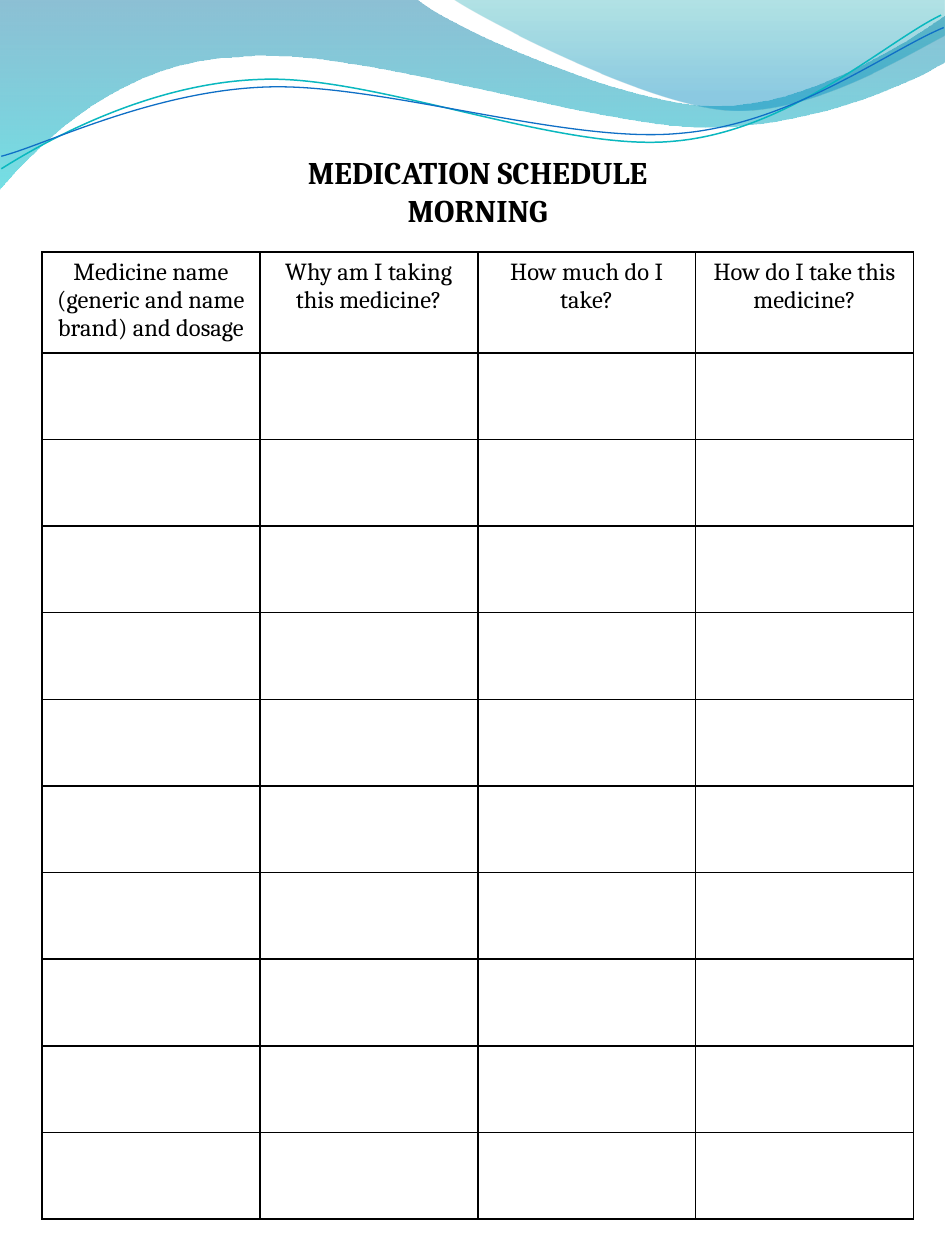
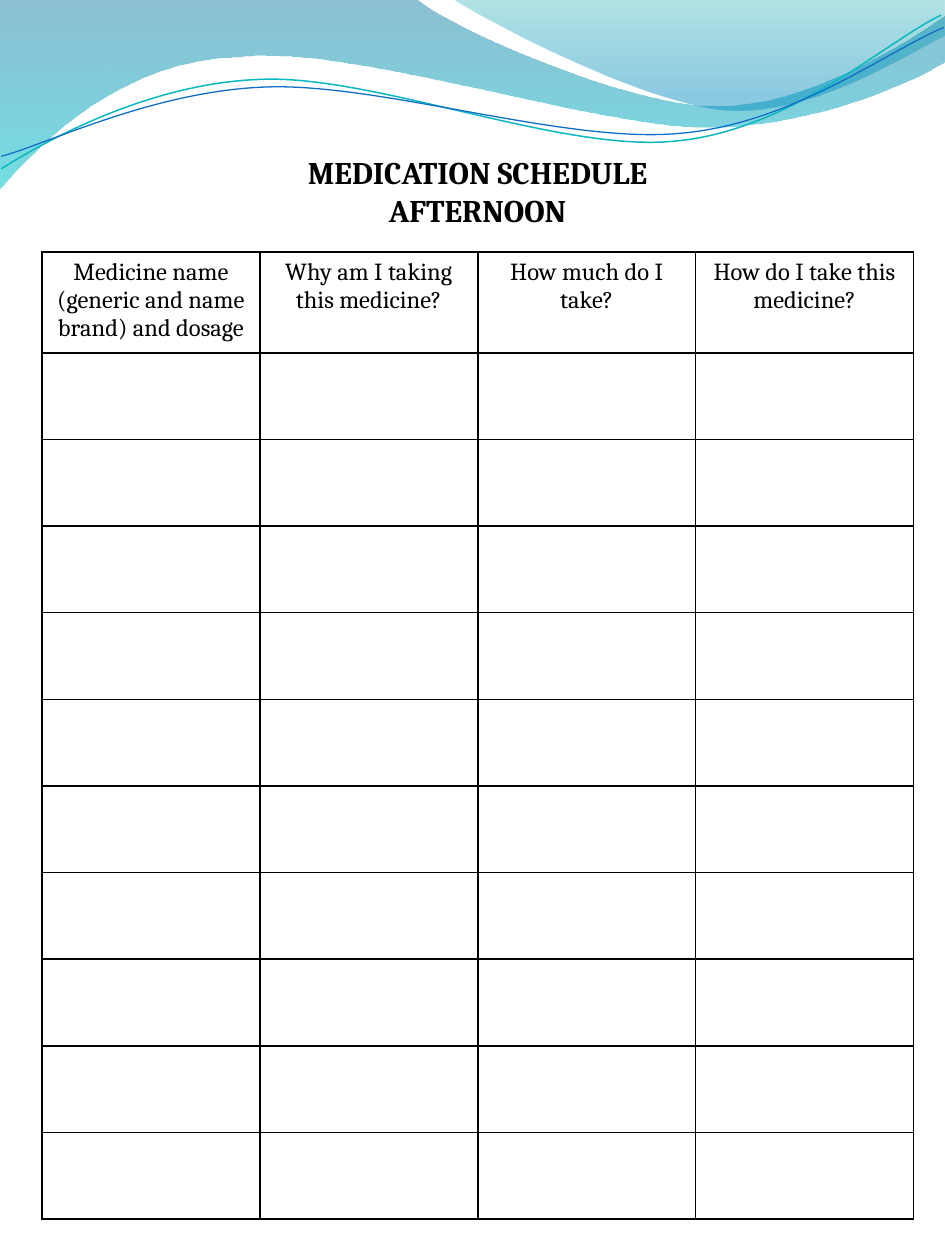
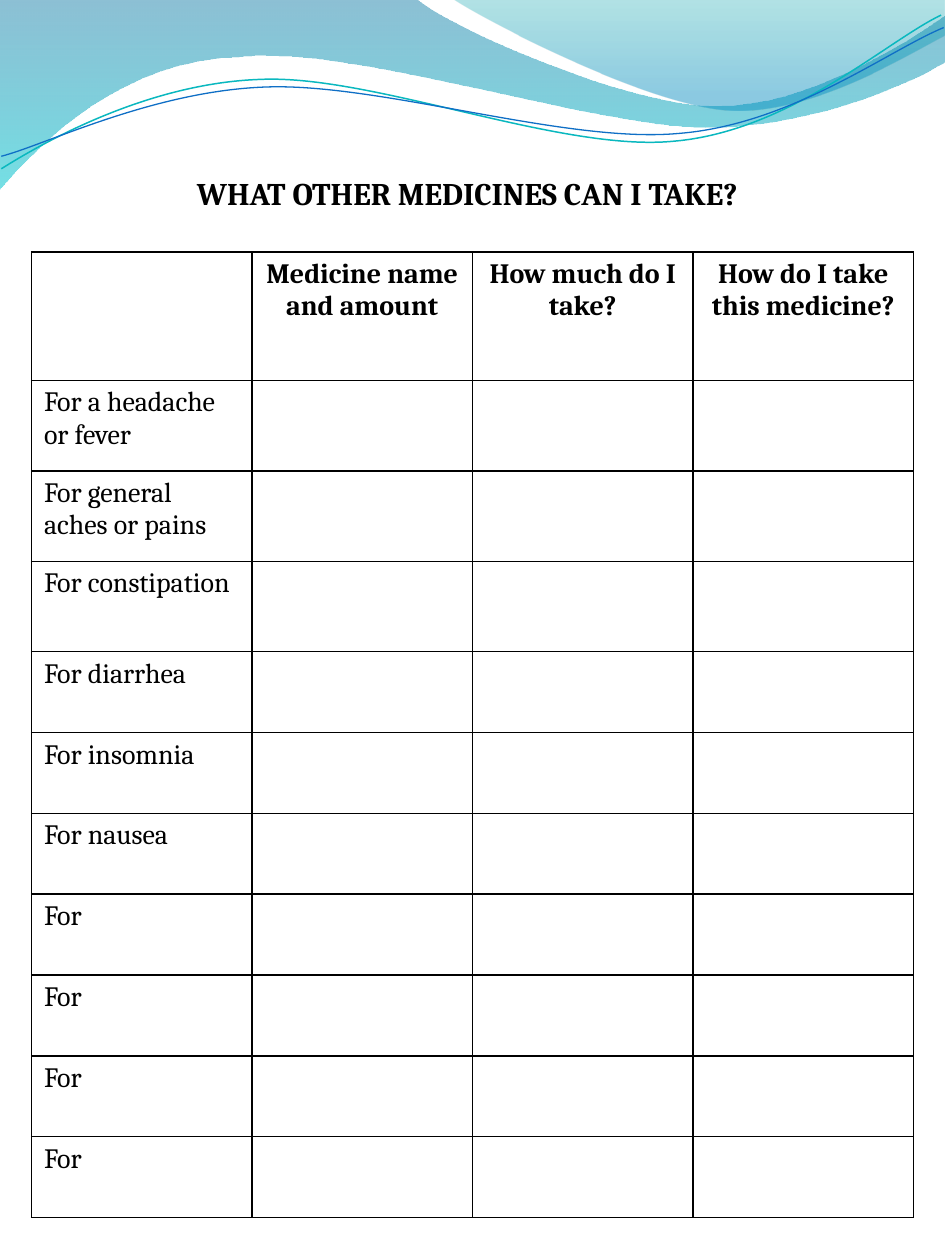
from lxml.etree import SubElement
from pptx import Presentation
from pptx.dml.color import RGBColor
from pptx.enum.text import MSO_AUTO_SIZE, PP_ALIGN
from pptx.oxml.ns import qn
from pptx.util import Pt

FONT = "Cambria"
INK = "000000"
TABLE_TOP = 144
STRAND_TILT = -2.7

SCHEDULE = {
    "title_box": (36, 84, 473.8, 51.1),
    "headings": ["Medicine name (generic and name brand) and dosage",
                 "Why am I taking this medicine?", "How much do I take?",
                 "How do I take this medicine?"],
    "heading_size": 14,
    "heading_bold": False,
    "reasons": [""] * 10,
    "left": 24,
    "column_width": 124.5,
    "row_heights": [57.6] + [49.5] * 10,
}
OTHER_MEDICINES = {
    "title_box": (30.2, 95.8, 473.8, 28.8),
    "headings": ["", "Medicine name and amount", "How much do I take?",
                 "How do I take this medicine?"],
    "heading_size": 16,
    "heading_bold": True,
    "reasons": ["For a headache or fever", "For general aches or pains",
                "For constipation", "For diarrhea", "For insomnia",
                "For nausea"] + ["For"] * 4,
    "left": 18,
    "column_width": 126,
    "row_heights": [73.4] + [51.7] * 3 + [46.2] * 7,
}
PAGES = [
    (["MEDICATION SCHEDULE", "MORNING"], SCHEDULE),
    (["MEDICATION SCHEDULE", "AFTERNOON"], SCHEDULE),
    (["WHAT OTHER MEDICINES CAN I TAKE?"], OTHER_MEDICINES),
]

WAVES = [
    {"start": (0, -0.7),
     "segments": [
         [(237.6, -0.7)],
         [(257, 15.8), (358.6, 60.5), (409.7, 60.5)],
         [(460.8, 60.5), (517.7, 24.5), (540, 8.6)],
         [(540.7, 34.6)],
         [(531.4, 41.8), (469.4, 72.7), (402.5, 72.7)],
         [(335.5, 72), (205.9, 26.6), (139, 32.4)],
         [(69.8, 33.8), (24.5, 79.9), (-0.7, 108.7)],
         [(0, -0.7)]],
     "gradient": [(0, "0074A1", 45), (1, "00C6CF", 55)]},
    {"start": (258.5, -0.7),
     "segments": [
         [(275, 10.8), (367.9, 59), (415.4, 62.6)],
         [(462.2, 66.2), (519.1, 31), (540, 20.2)],
         [(540, 0)],
         [(258.5, -0.7)]],
     "gradient": [(0, "00A1A9", 30), (0.8, "008BBF", 45)]},
    {"start": (-0.9, 83.8),
     "segments": [
         [(25, 69.1), (85.6, 38.8), (149.6, 39.7)],
         [(213.8, 39.9), (318.8, 89.5), (383.9, 86.1)],
         [(450.3, 83.5), (507.4, 35), (539.7, 21.3)]],
     "stroke": ("0AB8BF", 0.85)},
    {"start": (-0.5, 76.6),
     "segments": [
         [(25, 71.3), (88.2, 43.2), (153, 44.2)],
         [(217.9, 45), (322, 84.6), (386.4, 81.8)],
         [(451.3, 79.9), (508.6, 40), (540.9, 28.5)]],
     "stroke": ("0F6FC6", 0.75)},
]


def color(value):
    return RGBColor.from_string(value)


def bend(shape, segments):
    outline = next(shape._element.iter(qn("a:path")))
    corners = iter(outline.findall(qn("a:lnTo")))
    for segment in segments:
        group = [next(corners) for _ in segment]
        if len(group) == 3:
            curve = SubElement(outline, qn("a:cubicBezTo"))
            group[0].addprevious(curve)
            for corner in group:
                curve.append(corner[0])
                outline.remove(corner)


def fill_gradient(shape, stops):
    shape.fill.gradient()
    shape.fill.gradient_angle = 270
    for stop, (position, value, _) in zip(shape.fill.gradient_stops, stops):
        stop.position = position
        stop.color.rgb = color(value)
    tints = shape._element.spPr.iter(qn("a:srgbClr"))
    for tint, (_, _, opacity) in zip(list(tints), stops):
        SubElement(tint, qn("a:alpha"), val=str(opacity * 1000))


def add_wave(slide, wave):
    x, y = wave["start"]
    outline = slide.shapes.build_freeform(Pt(x), Pt(y))
    outline.add_line_segments(
        [(Pt(x), Pt(y)) for segment in wave["segments"] for x, y in segment],
        close="gradient" in wave)
    shape = outline.convert_to_shape()
    bend(shape, wave["segments"])
    shape.shadow.inherit = False
    if "gradient" in wave:
        fill_gradient(shape, wave["gradient"])
        shape.line.fill.background()
    else:
        value, width = wave["stroke"]
        shape.rotation = STRAND_TILT
        shape.fill.background()
        shape.line.color.rgb = color(value)
        shape.line.width = Pt(width)
    return shape


def write(paragraph, text, size, bold, align):
    paragraph.text = text
    paragraph.alignment = align
    paragraph.font.name = FONT
    paragraph.font.size = Pt(size)
    paragraph.font.bold = bold
    paragraph.font.color.rgb = color(INK)


def add_title(slide, lines, box):
    frame = slide.shapes.add_textbox(*map(Pt, box)).text_frame
    frame.word_wrap = True
    frame.auto_size = MSO_AUTO_SIZE.SHAPE_TO_FIT_TEXT
    for index, line in enumerate(lines):
        paragraph = frame.add_paragraph() if index else frame.paragraphs[0]
        write(paragraph, line, 18, True, PP_ALIGN.CENTER)


def style_cell(cell):
    properties = cell._tc.get_or_add_tcPr()
    for side in ("lnL", "lnR", "lnT", "lnB"):
        border = SubElement(properties, qn(f"a:{side}"), w=str(Pt(1)))
        SubElement(SubElement(border, qn("a:solidFill")),
                   qn("a:srgbClr"), val=INK)
    cell.fill.background()


def add_form(slide, form):
    headings, heights = form["headings"], form["row_heights"]
    width = form["column_width"]
    table = slide.shapes.add_table(
        len(heights), len(headings), Pt(form["left"]), Pt(TABLE_TOP),
        Pt(width * len(headings)), Pt(sum(heights))).table
    table.first_row = table.horz_banding = False
    for column in table.columns:
        column.width = Pt(width)
    for row, height in zip(table.rows, heights):
        row.height = Pt(height)
    for cell in table.iter_cells():
        style_cell(cell)
    size = form["heading_size"]
    for index, heading in enumerate(headings):
        if heading:
            write(table.cell(0, index).text_frame.paragraphs[0], heading,
                  size, form["heading_bold"], PP_ALIGN.CENTER)
    for index, reason in enumerate(form["reasons"], 1):
        if reason:
            write(table.cell(index, 0).text_frame.paragraphs[0], reason,
                  size, False, PP_ALIGN.LEFT)


def main():
    deck = Presentation()
    deck.slide_width, deck.slide_height = Pt(540), Pt(720)
    blank = deck.slide_layouts[6]
    for placeholder in list(blank.placeholders):
        placeholder._element.getparent().remove(placeholder._element)
    slides = [deck.slides.add_slide(blank) for _ in PAGES]
    for wave in WAVES:
        blank.shapes._spTree.append(add_wave(slides[0], wave)._element)
    for slide, (title, form) in zip(slides, PAGES):
        add_title(slide, title, form["title_box"])
        add_form(slide, form)
    deck.save("out.pptx")


if __name__ == "__main__":
    main()
